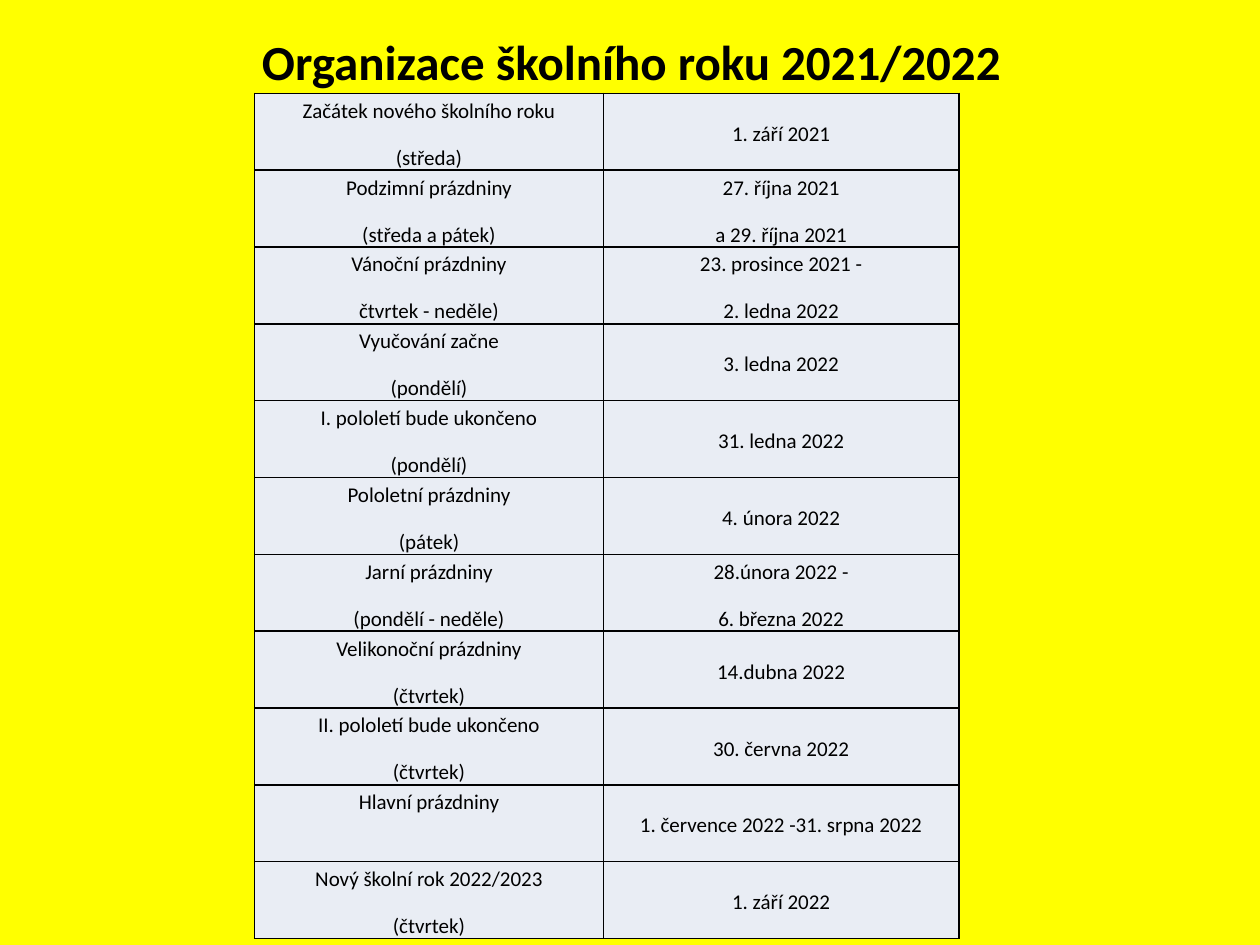
from lxml.etree import SubElement
from pptx import Presentation
from pptx.dml.color import RGBColor
from pptx.enum.text import MSO_ANCHOR as Anchor, PP_ALIGN as Align
from pptx.oxml.ns import qn
from pptx.util import Inches, Pt

FONT = "Calibri"
BLACK = "000000"
YELLOW = "FFFF00"
PALE_BLUE = "E9EDF4"
COLUMN_WIDTHS = (2.77, 2.82)
ROW_HEIGHT = 0.61
SCHOOL_YEAR = [
    (["Začátek nového školního roku", "(středa)"], ["1. září 2021"]),
    (["Podzimní prázdniny", "(středa a pátek)"], ["27. října 2021", "a 29. října 2021"]),
    (["Vánoční prázdniny", "čtvrtek - neděle)"], ["23. prosince 2021 -", "2. ledna 2022"]),
    (["Vyučování začne", "(pondělí)"], ["3. ledna 2022"]),
    (["I. pololetí bude ukončeno", "(pondělí)"], ["31. ledna 2022"]),
    (["Pololetní prázdniny", "(pátek)"], ["4. února 2022"]),
    (["Jarní prázdniny", "(pondělí - neděle)"], ["28.února 2022 -", "6. března 2022"]),
    (["Velikonoční prázdniny", "(čtvrtek)"], ["14.dubna 2022"]),
    (["II. pololetí bude ukončeno", "(čtvrtek)"], ["30. června 2022"]),
    (["Hlavní prázdniny"], ["1. července 2022 -31. srpna 2022"]),
    (["Nový školní rok 2022/2023", "(čtvrtek)"], ["1. září 2022"]),
]


def set_fill(fill, color):
    fill.solid()
    fill.fore_color.rgb = RGBColor.from_string(color)


def add_run(paragraph, text, size, bold=False):
    paragraph.alignment = Align.CENTER
    run = paragraph.add_run()
    run.text = text
    run.font.name = FONT
    run.font.size = Pt(size)
    run.font.bold = bold
    run.font.color.rgb = RGBColor.from_string(BLACK)


def add_title(slide, text):
    shape = slide.shapes.add_textbox(Inches(0.51), Inches(0.13), Inches(9), Inches(0.71))
    frame = shape.text_frame
    frame.word_wrap = True
    frame.vertical_anchor = Anchor.MIDDLE
    add_run(frame.paragraphs[0], text, 28, bold=True)


def add_borders(cell, color, width):
    properties = cell._tc.get_or_add_tcPr()
    for side in ("L", "R", "T", "B"):
        line = SubElement(properties, qn(f"a:ln{side}"), w=str(Pt(width)))
        solid = SubElement(line, qn("a:solidFill"))
        SubElement(solid, qn("a:srgbClr"), val=color)


def fill_cell(cell, lines, anchor):
    add_borders(cell, BLACK, 1)
    set_fill(cell.fill, PALE_BLUE)
    cell.margin_left = cell.margin_right = cell.margin_top = Inches(0.01)
    cell.margin_bottom = 0
    cell.vertical_anchor = anchor
    frame = cell.text_frame
    for index, line in enumerate(lines):
        paragraph = frame.add_paragraph() if index else frame.paragraphs[0]
        paragraph.line_spacing = 1.15
        paragraph.space_after = Pt(10)
        add_run(paragraph, line, 12)


def add_calendar(slide, entries):
    frame = slide.shapes.add_table(
        len(entries), len(COLUMN_WIDTHS), Inches(2.02), Inches(0.74),
        Inches(sum(COLUMN_WIDTHS)), Inches(ROW_HEIGHT * len(entries)))
    table = frame.table
    table.first_row = table.horz_banding = False
    for column, width in zip(table.columns, COLUMN_WIDTHS):
        column.width = Inches(width)
    for row, (event, date) in zip(table.rows, entries):
        row.height = Inches(ROW_HEIGHT)
        fill_cell(row.cells[0], event, Anchor.TOP)
        fill_cell(row.cells[1], date, Anchor.MIDDLE)


def main():
    presentation = Presentation()
    presentation.slide_width = Inches(10)
    presentation.slide_height = Inches(7.5)
    slide = presentation.slides.add_slide(presentation.slide_layouts[6])
    set_fill(slide.background.fill, YELLOW)
    add_title(slide, "Organizace školního roku 2021/2022")
    add_calendar(slide, SCHOOL_YEAR)
    presentation.save("out.pptx")


if __name__ == "__main__":
    main()
